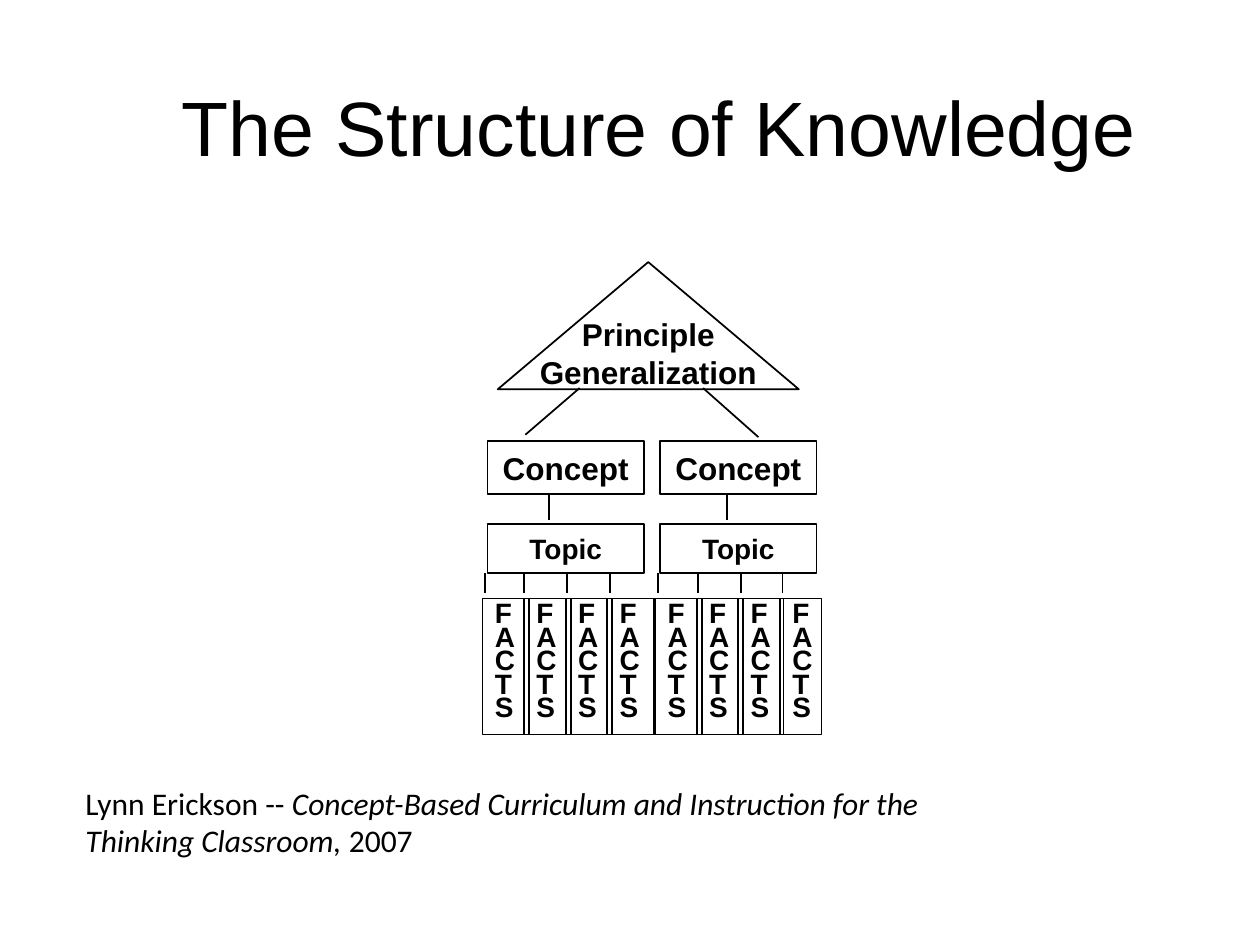
"""Build the Structure of Knowledge slide."""
from lxml import etree
from pptx import Presentation
from pptx import util as u
from pptx.dml import color
from pptx.enum import shapes, text
from pptx.oxml import ns

COLORS = {"ink": "000000", "paper": "FFFFFF"}
INK = color.RGBColor.from_string(COLORS["ink"])
HEADING = {"name": "Arial", "size": u.Pt(44), "bold": False}
TRAILING = {"name": "Arial", "size": u.Pt(32), "bold": False}
LARGE = {"name": "Arial", "size": u.Pt(18), "bold": True}
SMALL = {"name": "Arial", "size": u.Pt(16), "bold": True}
SOURCE = {"name": "Calibri", "size": u.Pt(18), "italic": False}
BOOK = {**SOURCE, "italic": True}
CENTER, LEFT = text.PP_ALIGN.CENTER, text.PP_ALIGN.LEFT
TOP, MIDDLE = text.MSO_ANCHOR.TOP, text.MSO_ANCHOR.MIDDLE


def write(holder, paragraphs, align, anchor=TOP, spacing=1.0):
    frame = holder.text_frame
    frame.word_wrap = True
    frame.auto_size = text.MSO_AUTO_SIZE.NONE
    frame.vertical_anchor = anchor
    for index, runs in enumerate(paragraphs):
        paragraph = frame.add_paragraph() if index else frame.paragraphs[0]
        paragraph.alignment = align
        paragraph.line_spacing = spacing
        for words, style in runs:
            run = paragraph.add_run()
            run.text = words
            run.font.color.rgb = INK
            for key, value in style.items():
                setattr(run.font, key, value)


def outline(preset, left, top, width, height):
    figure = slide.shapes.add_shape(
        preset, u.Inches(left), u.Inches(top), u.Inches(width), u.Inches(height))
    figure.shadow.inherit = False
    figure.fill.background()
    figure.line.color.rgb = INK
    figure.line.width = u.Pt(1)
    return figure


deck = Presentation()
deck.slide_width, deck.slide_height = u.Inches(10), u.Inches(7.5)
slide = deck.slides.add_slide(deck.slide_layouts[5])
slide.background.fill.solid()
slide.background.fill.fore_color.rgb = color.RGBColor.from_string(COLORS["paper"])

heading = slide.shapes.title
heading.left, heading.top = u.Inches(0.92), u.Inches(0.58)
heading.width, heading.height = u.Inches(8.75), u.Inches(0.84)
write(heading, [[("The Structure of Knowledge", HEADING), (" ", TRAILING)]], CENTER, MIDDLE)

branches = [(4.6, 3.08, 4.17, 3.45), (6.02, 3.47, 5.58, 3.08)]
branches += [(x, 3.92, x, 4.13) for x in (4.36, 5.77)]
branches += [(x, 4.55, x, 4.71) for x in (3.85, 4.16, 4.5, 4.84, 5.22, 5.54, 5.88, 6.21)]
for ends in branches:
    branch = slide.shapes.add_connector(
        shapes.MSO_CONNECTOR.STRAIGHT, *[u.Inches(end) for end in ends])
    branch.line.color.rgb = INK
    branch.line.width = u.Pt(1)
    etree.SubElement(branch._element.spPr, ns.qn("a:effectLst"))

outline(shapes.MSO_SHAPE.ISOSCELES_TRIANGLE, 3.95, 2.08, 2.39, 1.01)

for label, top, height, style in [("Concept", 3.5, 0.42, LARGE), ("Topic", 4.16, 0.39, SMALL)]:
    for left in (3.87, 5.24):
        level = outline(shapes.MSO_SHAPE.RECTANGLE, left, top, 1.24, height)
        write(level, [[(label, style)]], CENTER, MIDDLE)

principle = slide.shapes.add_textbox(
    u.Inches(4.12), u.Inches(2.45), u.Inches(2.05), u.Inches(0.72))
write(principle, [[("Principle", LARGE)], [("Generalization", LARGE)]], CENTER)

for start, widths in [(3.83, (0.37, 0.37, 0.37, 0.37)), (5.2, (0.37, 0.37, 0.36, 0.33))]:
    for column, width in enumerate(widths):
        facts = outline(shapes.MSO_SHAPE.RECTANGLE, start + 0.33 * column, 4.75, width, 1.08)
        write(facts, [[("FACTS", SMALL)]], LEFT, spacing=0.7)

citation = slide.shapes.add_textbox(
    u.Inches(0.58), u.Inches(6.17), u.Inches(7), u.Inches(0.71))
write(citation, [[
    ("Lynn Erickson -- ", SOURCE),
    ("Concept-Based Curriculum and Instruction for the Thinking Classroom, ", BOOK),
    ("2007", SOURCE),
]], LEFT)

deck.save("out.pptx")
